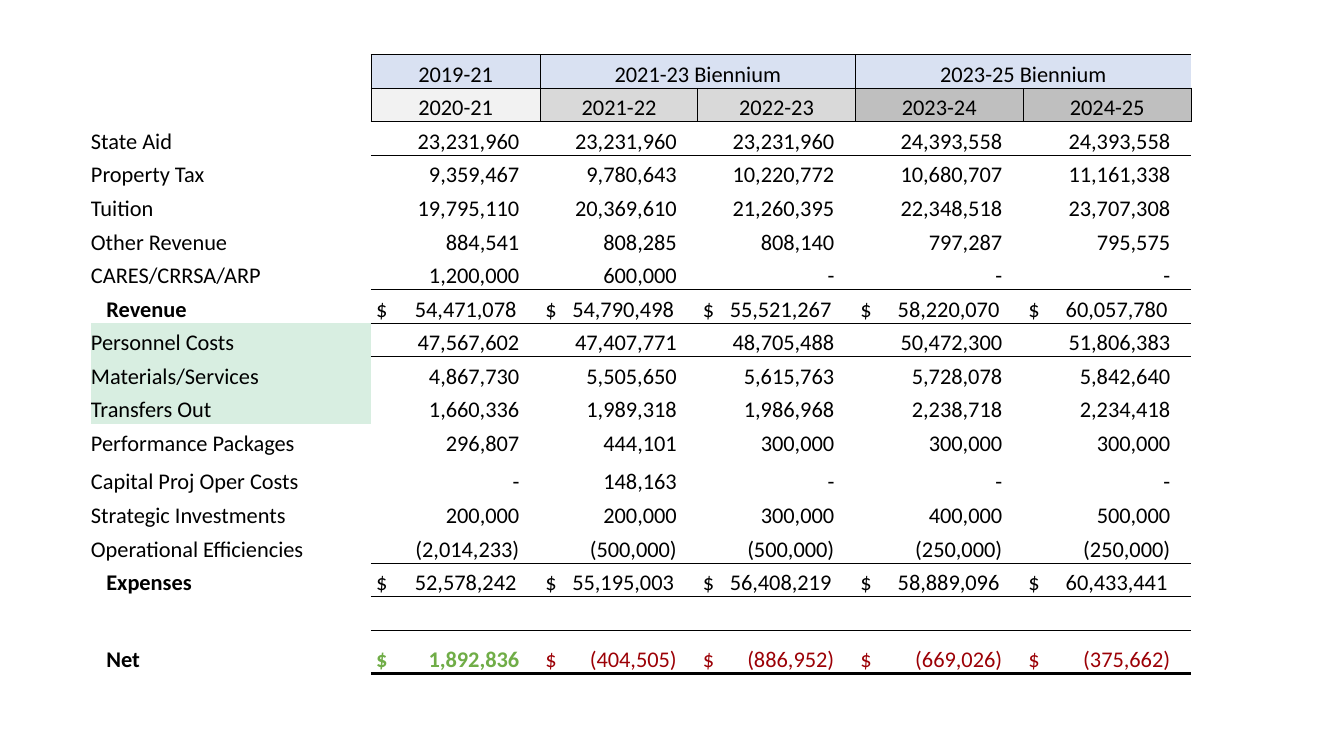
from dataclasses import dataclass

from pptx import Presentation
from pptx.dml.color import RGBColor
from pptx.enum.text import MSO_ANCHOR as Anchor, PP_ALIGN as Align
from pptx.oxml.ns import qn
from pptx.util import Pt
from lxml.etree import SubElement


@dataclass(frozen=True)
class Theme:
    font: str = "Calibri"
    size: int = 16
    ink: str = "000000"
    gain: str = "70AD47"
    loss: str = "9C0006"
    biennium: str = "D9E1F2"
    years: tuple = ("F2F2F2", "D9D9D9", "D9D9D9", "BFBFBF", "BFBFBF")
    highlight: str = "D8EEE1"
    thin: float = 0.5
    thick: float = 2
    no_grid_style: str = "{2D5ABB26-0587-4C30-8999-92F81FD0307C}"


BIENNIA = {1: "2019-21", 2: "2021-23 Biennium", 4: "2023-25 Biennium"}
YEARS = ["2020-21", "2021-22", "2022-23", "2023-24", "2024-25"]
BUDGET = [
    ("State Aid", 23231960, 23231960, 23231960, 24393558, 24393558),
    ("Property Tax", 9359467, 9780643, 10220772, 10680707, 11161338),
    ("Tuition", 19795110, 20369610, 21260395, 22348518, 23707308),
    ("Other Revenue", 884541, 808285, 808140, 797287, 795575),
    ("CARES/CRRSA/ARP", 1200000, 600000, 0, 0, 0),
    ("Revenue", 54471078, 54790498, 55521267, 58220070, 60057780),
    ("Personnel Costs", 47567602, 47407771, 48705488, 50472300, 51806383),
    ("Materials/Services", 4867730, 5505650, 5615763, 5728078, 5842640),
    ("Transfers Out", 1660336, 1989318, 1986968, 2238718, 2234418),
    ("Performance Packages", 296807, 444101, 300000, 300000, 300000),
    ("Capital Proj Oper Costs", 0, 148163, 0, 0, 0),
    ("Strategic Investments", 200000, 200000, 300000, 400000, 500000),
    ("Operational Efficiencies", -2014233, -500000, -500000, -250000, -250000),
    ("Expenses", 52578242, 55195003, 56408219, 58889096, 60433441),
    (),
    ("Net", 1892836, -404505, -886952, -669026, -375662),
]
TOTALS = {"Revenue", "Expenses", "Net"}
HIGHLIGHTED = {"Personnel Costs", "Materials/Services", "Transfers Out"}

COLUMN_WIDTHS = [200, 121, 112.5, 112.5, 120, 120]
HEADER_ROWS = 2
NET_ROW = HEADER_ROWS + len(BUDGET) - 1
ROW_HEIGHTS = {12: 27.5, NET_ROW: 31}
RULED_ROWS = {0, 1, 6, 7, 14, 15, 16, NET_ROW}
GROUP_STARTS, GROUP_ENDS = {1, 2, 4}, {1, 3, 5}
LABEL_INDENT, DOLLAR_INSET, AMOUNT_INSET, TOTAL_INSET = 11, 3.6, 15, 17


def accounting(amount):
    """Thousands separators, parentheses for negatives, a dash for zero."""
    if amount == 0:
        return "-"
    return f"{amount:,}" if amount > 0 else f"({-amount:,})"


class BudgetSlide:
    def __init__(self, presentation, theme):
        self.theme = theme
        self.slide = presentation.slides.add_slide(presentation.slide_layouts[6])

    def add_grid(self, left, top, widths, heights):
        frame = self.slide.shapes.add_table(
            len(heights), len(widths), Pt(left), Pt(top),
            Pt(sum(widths)), Pt(sum(heights)))
        grid = frame.table
        for option in ("first_row", "horz_banding"):
            setattr(grid, option, False)
        grid._tbl.tblPr.find(qn("a:tableStyleId")).text = self.theme.no_grid_style
        for column, width in zip(grid.columns, widths):
            column.width = Pt(width)
        for row, height in zip(grid.rows, heights):
            row.height = Pt(height)
        for cell in grid.iter_cells():
            self.inset(cell)
        return grid

    def inset(self, cell, left=0, right=0):
        layout = {"margin_left": Pt(left), "margin_right": Pt(right),
                  "margin_top": 0, "margin_bottom": 0,
                  "vertical_anchor": Anchor.BOTTOM}
        for name, value in layout.items():
            setattr(cell, name, value)

    def border(self, cell, sides):
        """Draw borders; sides maps L, R, T and B, in that order, to widths."""
        properties = cell._tc.get_or_add_tcPr()
        for side, width in sides.items():
            line = SubElement(properties, qn(f"a:ln{side}"), w=str(Pt(width)))
            fill = SubElement(line, qn("a:solidFill"))
            SubElement(fill, qn("a:srgbClr"), val=self.theme.ink)

    def fill(self, cell, colour):
        cell.fill.solid()
        cell.fill.fore_color.rgb = RGBColor.from_string(colour)

    def add_text(self, cell, text, align=Align.LEFT, bold=False, colour=None):
        paragraph = cell.text_frame.paragraphs[0]
        paragraph.alignment = align
        run = paragraph.add_run()
        run.text = text
        style = {"name": self.theme.font, "size": Pt(self.theme.size), "bold": bold}
        for name, value in style.items():
            setattr(run.font, name, value)
        run.font.color.rgb = RGBColor.from_string(colour or self.theme.ink)

    def add_total(self, cell, amount, width, inset, **style):
        """Dollar sign at the left, amount on a right tab stop."""
        self.inset(cell, left=DOLLAR_INSET)
        self.add_text(cell, "$\t" + accounting(amount), **style)
        properties = cell.text_frame.paragraphs[0]._p.get_or_add_pPr()
        stops = SubElement(properties, qn("a:tabLst"))
        SubElement(stops, qn("a:tab"),
                   pos=str(Pt(width - DOLLAR_INSET - inset)), algn="r")

    def rule_grid(self, grid):
        thin = self.theme.thin
        for row in range(len(grid.rows)):
            for column in range(1, len(grid.columns)):
                sides = {}
                if row < HEADER_ROWS and column in GROUP_STARTS:
                    sides["L"] = thin
                if row < HEADER_ROWS and column in GROUP_ENDS:
                    sides["R"] = thin
                if row == 0 or row - 1 in RULED_ROWS:
                    sides["T"] = thin
                if row in RULED_ROWS:
                    sides["B"] = self.theme.thick if row == NET_ROW else thin
                self.border(grid.cell(row, column), sides)

    def add_header(self, grid):
        for column, biennium in BIENNIA.items():
            cell = grid.cell(0, column)
            if column not in GROUP_ENDS:
                cell.merge(grid.cell(0, column + 1))
            self.fill(cell, self.theme.biennium)
            self.add_text(cell, biennium, Align.CENTER)
        for column, (year, shade) in enumerate(zip(YEARS, self.theme.years), 1):
            self.fill(grid.cell(1, column), shade)
            self.add_text(grid.cell(1, column), year, Align.CENTER)

    def add_entry(self, grid, row, label, amounts):
        is_total = label in TOTALS
        label_cell = grid.cell(row, 0)
        self.inset(label_cell, left=LABEL_INDENT if is_total else 0)
        self.add_text(label_cell, label, bold=is_total)
        if label in HIGHLIGHTED:
            self.fill(label_cell, self.theme.highlight)
        for column, amount in enumerate(amounts, 1):
            cell = grid.cell(row, column)
            width = COLUMN_WIDTHS[column]
            if row == NET_ROW:
                gained = amount > 0
                self.add_total(cell, amount, width, AMOUNT_INSET, bold=gained,
                               colour=self.theme.gain if gained else self.theme.loss)
            elif is_total:
                self.add_total(cell, amount, width, TOTAL_INSET)
            else:
                self.inset(cell, right=AMOUNT_INSET)
                self.add_text(cell, accounting(amount), Align.RIGHT)


def main():
    presentation = Presentation()
    presentation.slide_width, presentation.slide_height = Pt(960), Pt(540)
    budget = BudgetSlide(presentation, Theme())
    heights = [ROW_HEIGHTS.get(row, 24) for row in range(NET_ROW + 1)]
    grid = budget.add_grid(65, 39, COLUMN_WIDTHS, heights)
    budget.rule_grid(grid)
    budget.add_header(grid)
    for row, entry in enumerate(BUDGET, HEADER_ROWS):
        if entry:
            label, *amounts = entry
            budget.add_entry(grid, row, label, amounts)
    presentation.save("out.pptx")


if __name__ == "__main__":
    main()
